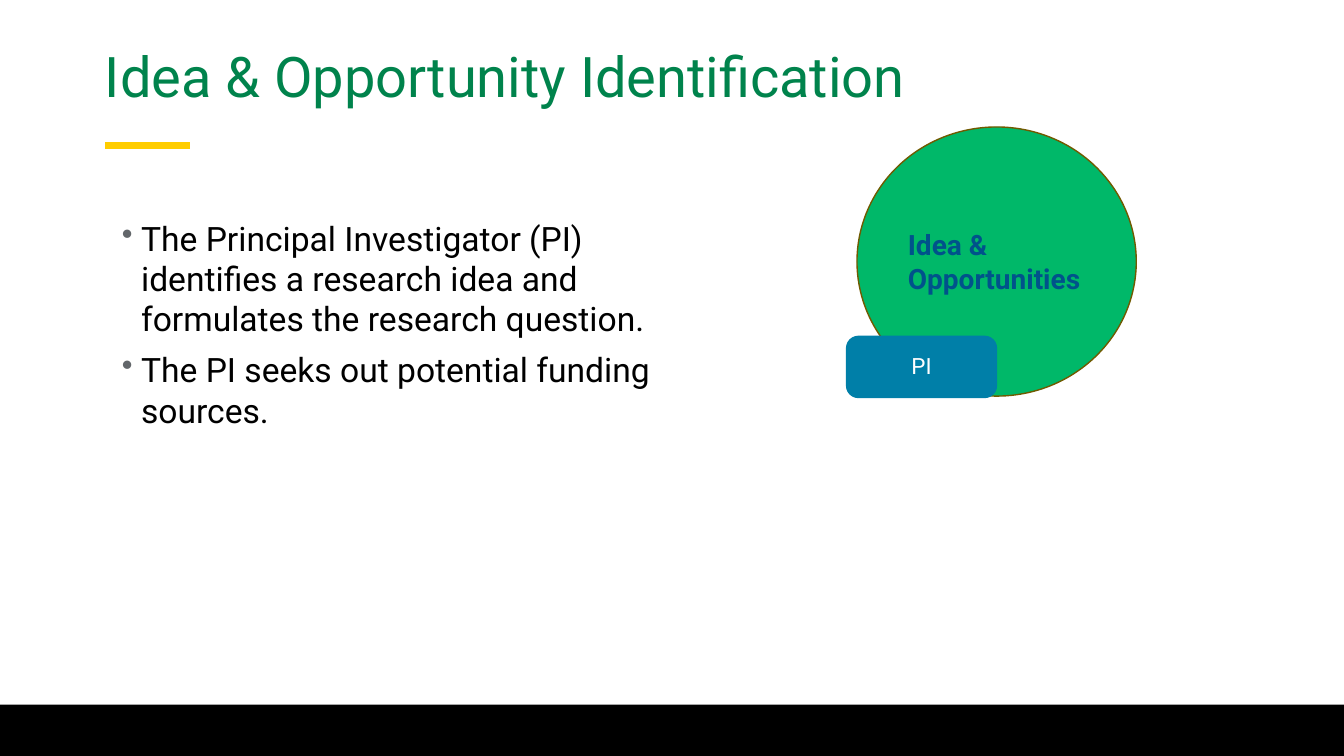
from lxml import etree
from pptx import Presentation
from pptx.dml.color import RGBColor
from pptx.enum.shapes import MSO_CONNECTOR, MSO_SHAPE
from pptx.enum.text import MSO_ANCHOR, PP_ALIGN
from pptx.oxml.ns import qn
from pptx.util import Inches, Pt

# Content
TITLE = "Idea & Opportunity Identification"
POINTS = [
    "The Principal Investigator (PI) identifies a research idea and formulates the research question.",
    "The PI seeks out potential funding sources.",
]
STAGE = "Idea & Opportunities"
ROLE = "PI"

# Style
FONT = "Roboto"
GREEN = RGBColor(0x00, 0x83, 0x4C)
BRIGHT_GREEN = RGBColor(0x00, 0xB8, 0x69)
OLIVE = RGBColor(0x70, 0x5A, 0x00)
YELLOW = RGBColor(0xFF, 0xCD, 0x00)
NAVY = RGBColor(0x00, 0x52, 0x8B)
BLUE = RGBColor(0x00, 0x7F, 0xA8)
BLACK = RGBColor(0x00, 0x00, 0x00)
WHITE = RGBColor(0xFF, 0xFF, 0xFF)
BULLET_GRAY = "62666A"
OVAL = MSO_SHAPE.OVAL
RECTANGLE = MSO_SHAPE.RECTANGLE
ROUNDED = MSO_SHAPE.ROUNDED_RECTANGLE
STRAIGHT = MSO_CONNECTOR.STRAIGHT
MIDDLE = MSO_ANCHOR.MIDDLE
LEFT, CENTER = PP_ALIGN.LEFT, PP_ALIGN.CENTER

WIDTH, HEIGHT = 13.33, 7.5
FOOTER_HEIGHT = 0.51
MARGIN = 1.04


def style(para, size, color, bold=False):
    for span in para.runs:
        span.font.name = FONT
        span.font.size = Pt(size)
        span.font.color.rgb = color
        span.font.bold = bold


def set_insets(frame, inset):
    frame.margin_left = frame.margin_right = Inches(inset)
    frame.margin_top = frame.margin_bottom = Inches(inset)


def add_text_box(page, *place):
    frame = page.shapes.add_textbox(*map(Inches, place)).text_frame
    frame.word_wrap = True
    set_insets(frame, 0)
    return frame


def add_filled(page, kind, fill, *place):
    shape = page.shapes.add_shape(kind, *map(Inches, place))
    shape.shadow.inherit = False
    shape.fill.solid()
    shape.fill.fore_color.rgb = fill
    shape.line.fill.background()
    return shape


def label(shape, text, size, color, align, bold=False):
    frame = shape.text_frame
    frame.word_wrap = True
    frame.vertical_anchor = MIDDLE
    frame.text = text
    para = frame.paragraphs[0]
    para.alignment = align
    style(para, size, color, bold)
    return para


def add_bullet(para, indent):
    props = para._p.get_or_add_pPr()
    props.set("marL", str(Inches(indent)))
    props.set("indent", str(-Inches(indent)))
    color = etree.SubElement(props, qn("a:buClr"))
    etree.SubElement(color, qn("a:srgbClr"), val=BULLET_GRAY)
    etree.SubElement(props, qn("a:buSzPct"), val="95000")
    etree.SubElement(props, qn("a:buChar"), char="•")


def main():
    deck = Presentation()
    deck.slide_width, deck.slide_height = Inches(WIDTH), Inches(HEIGHT)
    page = deck.slides.add_slide(deck.slide_layouts[6])

    # Accent line and footer band
    accent = page.shapes.add_connector(
        STRAIGHT, Inches(MARGIN), Inches(1.44), Inches(1.88), Inches(1.44))
    accent.line.color.rgb = YELLOW
    accent.line.width = Pt(5)
    etree.SubElement(accent._element.spPr, qn("a:effectLst"))
    add_filled(page, RECTANGLE, BLACK, 0, HEIGHT - FOOTER_HEIGHT, WIDTH, FOOTER_HEIGHT)

    # Title
    frame = add_text_box(page, MARGIN, 0.31, 11.25, 0.95)
    frame.vertical_anchor = MIDDLE
    frame.text = TITLE
    frame.paragraphs[0].line_spacing = 0.9
    style(frame.paragraphs[0], 40, GREEN)

    # Bulleted points
    frame = add_text_box(page, 1.21, 2.16, 5.37, 3.27)
    frame.text = "\n".join(POINTS)
    for index, para in enumerate(frame.paragraphs):
        add_bullet(para, 0.19)
        if index:
            para.space_before = Pt(7.5)
        style(para, 24, BLACK)

    # Stage circle with its role tag
    circle = add_filled(page, OVAL, BRIGHT_GREEN, 8.5, 1.26, 2.77, 2.67)
    circle.line.color.rgb = OLIVE
    circle.line.width = Pt(1)
    label(circle, STAGE, 20, NAVY, LEFT, bold=True)

    tag = add_filled(page, ROUNDED, BLUE, 8.39, 3.33, 1.5, 0.62)
    tag.adjustments[0] = 0.2
    set_insets(tag.text_frame, 0.16)
    para = label(tag, ROLE, 16, WHITE, CENTER)
    para.line_spacing = 0.9
    para.space_after = Pt(5.6)

    deck.save("out.pptx")


if __name__ == "__main__":
    main()
